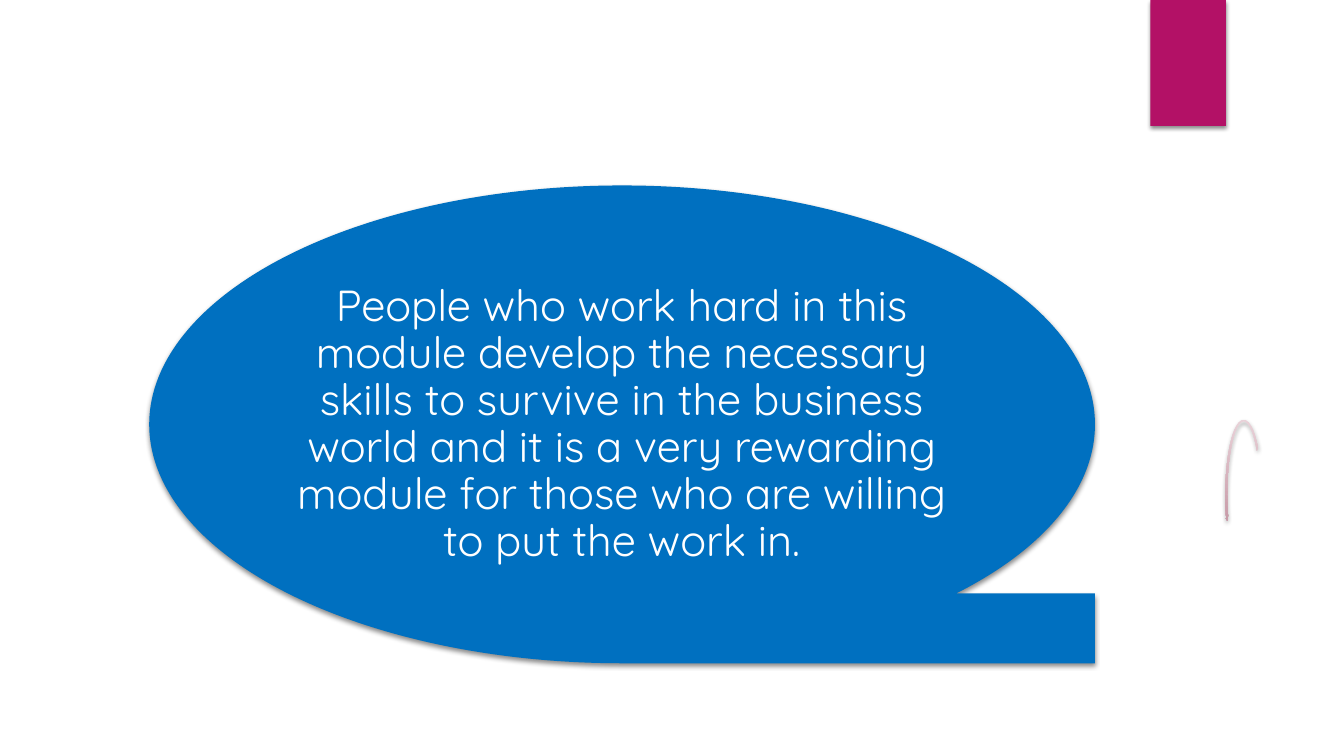
from dataclasses import dataclass

from lxml.etree import SubElement
from pptx import Presentation
from pptx.dml.color import RGBColor
from pptx.enum.shapes import MSO_SHAPE
from pptx.enum.text import MSO_ANCHOR, PP_ALIGN
from pptx.oxml.ns import qn
from pptx.util import Inches, Pt


@dataclass(frozen=True)
class Theme:
    accent: RGBColor = RGBColor(0xB3, 0x11, 0x66)
    bubble: RGBColor = RGBColor(0x00, 0x70, 0xC0)
    text: RGBColor = RGBColor(0xFF, 0xFF, 0xFF)
    arrow_top: RGBColor = RGBColor(0xE9, 0xD2, 0xD9)
    arrow_bottom: RGBColor = RGBColor(0xB7, 0x7E, 0x8F)
    shadow: str = "000000"
    font: str = "Quicksand"
    quote_size: Pt = Pt(31)


THEME = Theme()
QUOTE = (
    "People who work hard in this module develop the necessary skills to "
    "survive in the business world and it is a very rewarding module for "
    "those who are willing to put the work in."
)


def add_soft_shadow(shape):
    """Put a short, blurred shadow straight below the shape."""
    shape.shadow.inherit = False
    effects = shape._element.spPr.find(qn("a:effectLst"))
    shadow = SubElement(
        effects, qn("a:outerShdw"), blurRad=str(Pt(3)), dist=str(Pt(2)),
        dir="5400000", algn="ctr", rotWithShape="0",
    )
    color = SubElement(shadow, qn("a:srgbClr"), val=THEME.shadow)
    SubElement(color, qn("a:alpha"), val="45000")


def add_shadowed_shape(slide, kind, left, top, width, height):
    shape = slide.shapes.add_shape(
        kind, Inches(left), Inches(top), Inches(width), Inches(height)
    )
    shape.line.fill.background()
    add_soft_shadow(shape)
    return shape


def add_solid_shape(slide, kind, color, left, top, width, height):
    shape = add_shadowed_shape(slide, kind, left, top, width, height)
    shape.fill.solid()
    shape.fill.fore_color.rgb = color


def add_quote(slide, text, left, top, width, height):
    box = slide.shapes.add_textbox(
        Inches(left), Inches(top), Inches(width), Inches(height)
    )
    frame = box.text_frame
    frame.word_wrap = True
    frame.vertical_anchor = MSO_ANCHOR.MIDDLE
    frame.margin_left = frame.margin_right = Inches(0.04)
    frame.margin_top = frame.margin_bottom = Inches(0.04)
    paragraph = frame.paragraphs[0]
    paragraph.text = text
    paragraph.alignment = PP_ALIGN.CENTER
    paragraph.line_spacing = 0.9
    paragraph.font.name = THEME.font
    paragraph.font.size = THEME.quote_size
    paragraph.font.color.rgb = THEME.text


def add_curved_arrow(slide, left, top, width, height):
    """Add a thin circular arrow, mirrored, fading from top to bottom."""
    arrow = add_shadowed_shape(
        slide, MSO_SHAPE.CIRCULAR_ARROW, left, top, width, height
    )
    for index, value in enumerate((0.049, 3.126, 31.538, 152.062, 0.057)):
        arrow.adjustments[index] = value
    arrow._element.spPr.xfrm.set("flipH", "1")
    arrow.fill.gradient()
    arrow.fill.gradient_angle = 270
    colors = (THEME.arrow_top, THEME.arrow_bottom)
    for position, (stop, color) in enumerate(zip(arrow.fill.gradient_stops, colors)):
        stop.position = position
        stop.color.rgb = color


def main():
    presentation = Presentation()
    presentation.slide_width = Inches(13.33)
    presentation.slide_height = Inches(7.5)
    slide = presentation.slides.add_slide(presentation.slide_layouts[6])

    add_solid_shape(slide, MSO_SHAPE.RECTANGLE, THEME.accent, 11.41, 0, 0.75, 1.25)
    add_solid_shape(
        slide, MSO_SHAPE.FLOWCHART_SEQUENTIAL_ACCESS_STORAGE, THEME.bubble,
        1.48, 1.84, 9.38, 4.74,
    )
    add_quote(slide, QUOTE, 2.85, 2.54, 6.63, 3.35)
    add_curved_arrow(slide, 12.14, 4.15, 0.39, 1.52)

    presentation.save("out.pptx")


if __name__ == "__main__":
    main()
